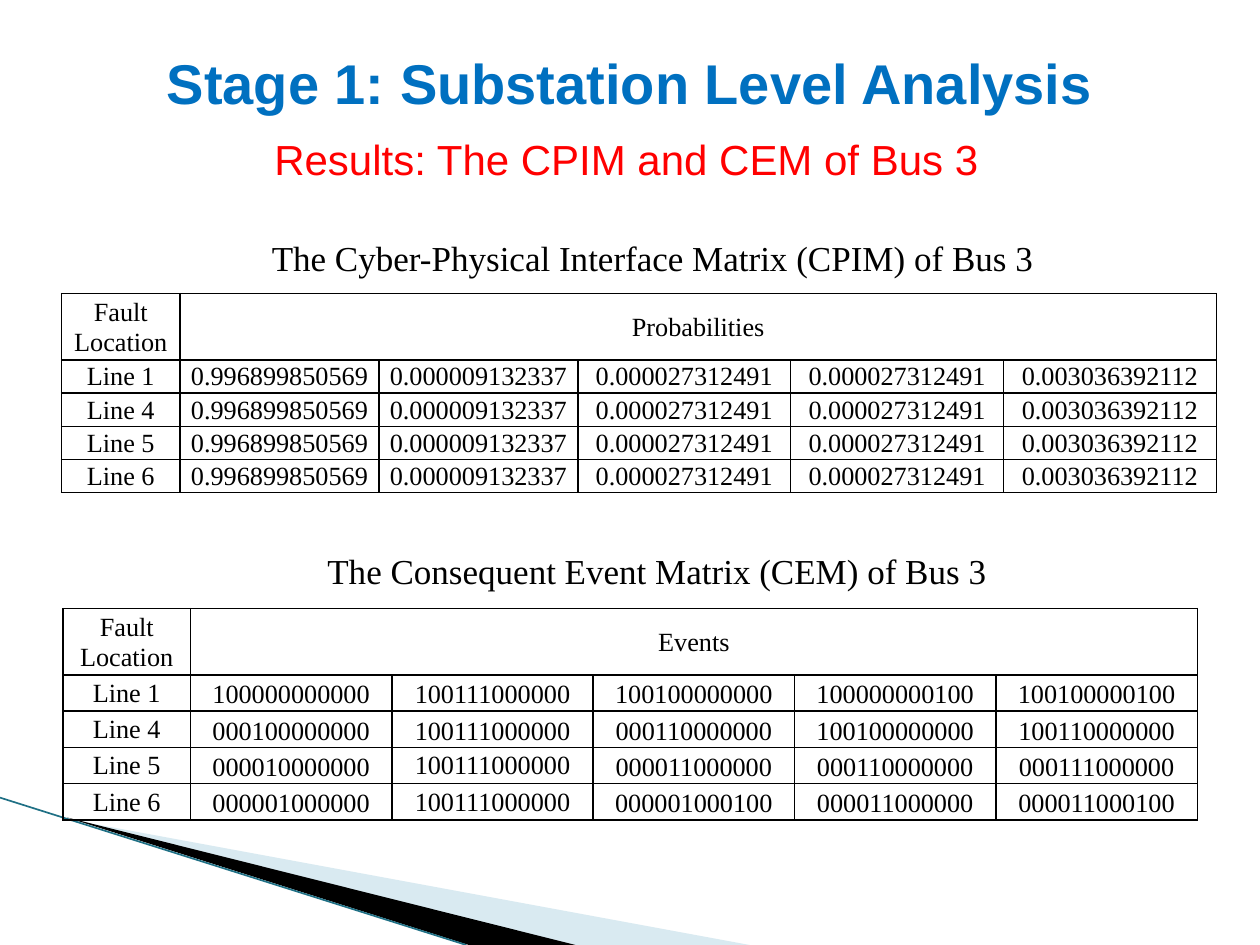
from lxml import etree
from pptx import Presentation
from pptx.dml.color import RGBColor
from pptx.enum.shapes import MSO_CONNECTOR
from pptx.enum.text import MSO_ANCHOR, PP_ALIGN
from pptx.oxml import parse_xml
from pptx.oxml.ns import nsdecls, qn
from pptx.util import Cm, Pt

BLACK = RGBColor(0, 0, 0)
BLUE = RGBColor(0x00, 0x70, 0xC0)
RED = RGBColor(0xFF, 0, 0)
PALE = RGBColor(0xA0, 0xCB, 0xDC)
TEAL = RGBColor(0x1F, 0x70, 0x85)
CENTER, LEFT = PP_ALIGN.CENTER, PP_ALIGN.LEFT
MIDDLE, TOP = MSO_ANCHOR.MIDDLE, MSO_ANCHOR.TOP
STRAIGHT = MSO_CONNECTOR.STRAIGHT
SANS, SERIF = "Arial", "Times New Roman"


def style(para, face, size, color, bold=False):
    for run in para.runs:
        font = run.font
        font.name, font.size, font.bold = face, Pt(size), bold
        font.color.rgb = color


def frame(cell):
    props = cell._tc.get_or_add_tcPr()
    for spot, side in enumerate(("lnL", "lnR", "lnT", "lnB")):
        props.insert(spot, parse_xml(
            f'<a:{side} {nsdecls("a")} w="12700"><a:solidFill>'
            f'<a:srgbClr val="{BLACK}"/></a:solidFill></a:{side}>'))


deck = Presentation()
deck.slide_width, deck.slide_height = Cm(25.4), Cm(19.05)
slide = deck.slides.add_slide(deck.slide_layouts[6])
shapes = slide.shapes

wedges = [
    (PALE, 40, [(1.4, 16.52), (15.11, 19.05), (11.58, 19.05)]),
    (BLACK, 100, [(1.35, 16.48), (11.6, 19.05), (9.45, 19.05)]),
]
for color, alpha, points in wedges:
    start, *rest = [(Cm(x), Cm(y)) for x, y in points]
    path = shapes.build_freeform(*start)
    path.add_line_segments(rest)
    wedge = path.convert_to_shape()
    wedge.shadow.inherit = False
    wedge.fill.solid()
    wedge.fill.fore_color.rgb = color
    wedge.line.fill.background()
    if alpha < 100:
        tint = wedge._element.spPr.find(".//" + qn("a:srgbClr"))
        etree.SubElement(tint, qn("a:alpha"), val=str(alpha * 1000))

edge = shapes.add_connector(STRAIGHT, 0, Cm(16.08), Cm(9.4), Cm(19.05))
edge.line.color.rgb = TEAL
edge.line.width = Pt(0.95)
etree.SubElement(edge._element.spPr, qn("a:effectLst"))

labels = [
    ("Stage 1: Substation Level Analysis", 1.27, 0.76, 22.86, 1.78,
     SANS, 32, BLUE, True, CENTER, MIDDLE),
    ("Results: The CPIM and CEM of Bus 3", 5.28, 2.57, 16.31, 1.27,
     SANS, 24, RED, False, LEFT, TOP),
    ("The Cyber-Physical Interface Matrix (CPIM) of Bus 3", 5.23, 4.65, 16.31, 1.12,
     SERIF, 20, BLACK, False, LEFT, TOP),
    ("The Consequent Event Matrix (CEM) of Bus 3", 6.35, 10.95, 15.04, 1.12,
     SERIF, 20, BLACK, False, LEFT, TOP),
]
for words, x, y, wide, high, face, size, color, bold, align, anchor in labels:
    body = shapes.add_textbox(Cm(x), Cm(y), Cm(wide), Cm(high)).text_frame
    body.word_wrap = True
    body.vertical_anchor = anchor
    body.text = words
    para = body.paragraphs[0]
    para.alignment = align
    style(para, face, size, color, bold)

lines = ["Line 1", "Line 4", "Line 5", "Line 6"]
odds = ["0.996899850569", "0.000009132337", "0.000027312491",
        "0.000027312491", "0.003036392112"]
events = [
    ["100000000000", "100111000000", "100100000000", "100000000100", "100100000100"],
    ["000100000000", "100111000000", "000110000000", "100100000000", "100110000000"],
    ["000010000000", "100111000000", "000011000000", "000110000000", "000111000000"],
    ["000001000000", "100111000000", "000001000100", "000011000000", "000011000100"],
]
tables = [
    ("Probabilities", [odds] * len(lines), 1.24, 5.92, 0.67,
     [2.39, 4.01, 4.01, 4.29, 4.29, 4.29], 1.05),
    ("Events", events, 1.27, 12.27, 0.73, [2.57] + [4.06] * 5, 1.15),
]
for head, values, x, y, high, widths, space in tables:
    rows = [["Fault Location", head] + [""] * 4]
    rows += [[name] + row for name, row in zip(lines, values)]
    highs = [1.33] + [high] * len(lines)
    grid = shapes.add_table(len(rows), len(widths), Cm(x), Cm(y),
                            Cm(sum(widths)), Cm(sum(highs))).table
    grid.first_row = grid.horz_banding = False
    for col, wide in zip(grid.columns, widths):
        col.width = Cm(wide)
    for r, row in enumerate(rows):
        grid.rows[r].height = Cm(highs[r])
        for c, words in enumerate(row):
            cell = grid.cell(r, c)
            cell.fill.background()
            frame(cell)
            cell.vertical_anchor = MIDDLE
            cell.margin_left = cell.margin_right = Cm(0.18)
            cell.margin_top = cell.margin_bottom = 0
            cell.text_frame.text = words
            para = cell.text_frame.paragraphs[0]
            para.alignment = CENTER
            tight = r == 0 or c == 0 or (c == 2 and r > 2)
            para.line_spacing = 1.05 if tight else space
            style(para, SERIF, 15, BLACK)
    grid.cell(0, 1).merge(grid.cell(0, 5))

deck.save("out.pptx")
